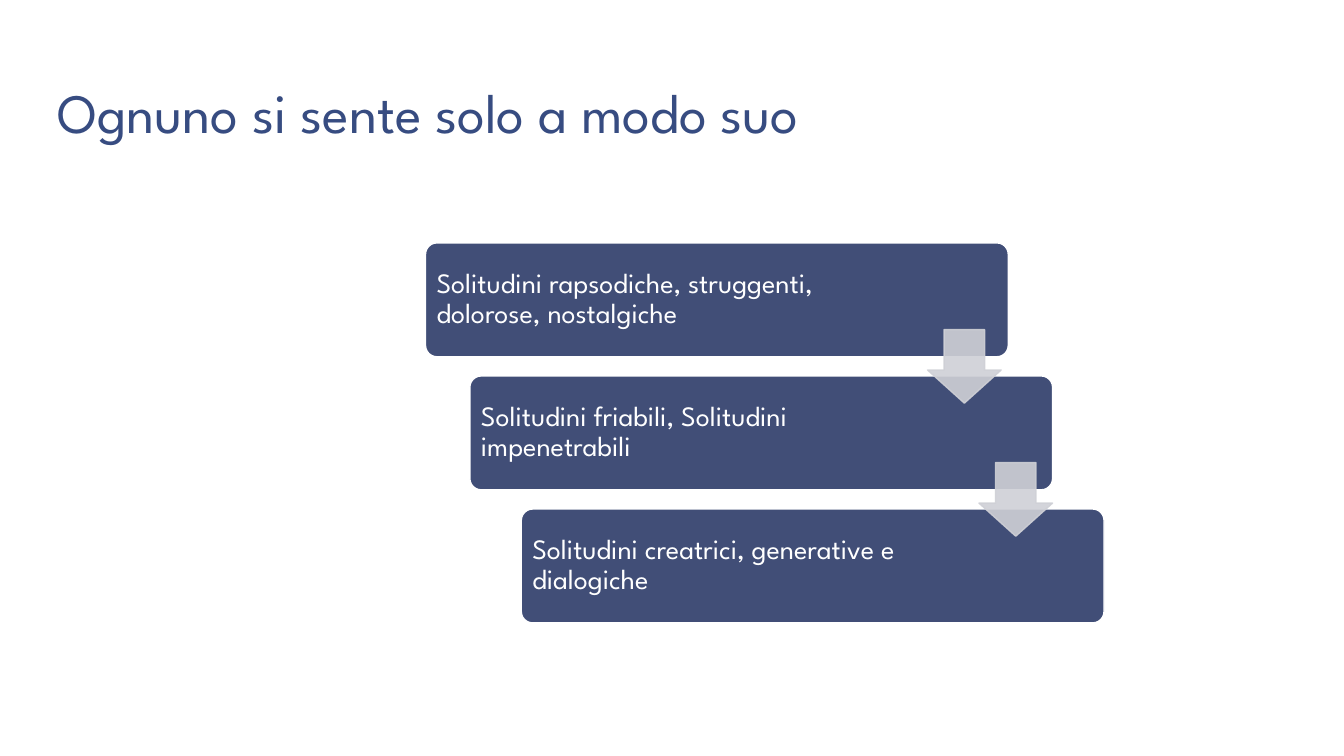
from lxml import etree
from pptx import Presentation
from pptx import util as u
from pptx.dml.color import RGBColor
from pptx.enum import shapes, text
from pptx.oxml.ns import qn

PX = 9144
NAVY, TITLE, ARROW, WHITE = "414E77", "374C81", "CFD0D6", "FFFFFF"
STEPS = [
    (422, 457, "Solitudini rapsodiche, struggenti, dolorose, nostalgiche"),
    (466, 447, "Solitudini friabili, Solitudini impenetrabili"),
    (517, 447, "Solitudini creatrici, generative e dialogiche"),
]
STEP_TOP, STEP_PITCH, STEP_W, STEP_H = 241, 132, 578, 113


def rgb(value):
    return RGBColor.from_string(value)


class Deck:
    font = "League Spartan"

    def __init__(self, width, height):
        self.prs = Presentation()
        self.prs.slide_width = width * PX
        self.prs.slide_height = height * PX
        self.s = self.prs.slides.add_slide(self.prs.slide_layouts[6])

    def shape(self, kind, box, adjustments, fill, line, opacity=100):
        sp = self.s.shapes.add_shape(kind, *(n * PX for n in box))
        sp.shadow.inherit = False
        for i, value in enumerate(adjustments):
            sp.adjustments[i] = value
        sp.fill.solid()
        sp.fill.fore_color.rgb = rgb(fill)
        sp.line.color.rgb = rgb(line)
        sp.line.width = u.Pt(1)
        if opacity < 100:
            for color in sp._element.spPr.iter(qn("a:srgbClr")):
                etree.SubElement(color, qn("a:alpha"), val=str(opacity * 1000))

    def text(self, box, words, size, color, anchor, insets, spacing):
        tf = self.s.shapes.add_textbox(*(n * PX for n in box)).text_frame
        tf.word_wrap = True
        tf.vertical_anchor = anchor
        tf.margin_left = tf.margin_right = insets[0] * PX
        tf.margin_top = tf.margin_bottom = insets[1] * PX
        p = tf.paragraphs[0]
        p.line_spacing = spacing
        r = p.add_run()
        r.text = words
        r.font.name = self.font
        r.font.size = u.Pt(size)
        r.font.color.rgb = rgb(color)


def main():
    deck = Deck(1333, 750)
    deck.text((44, 21, 781, 130), "Ognuno si sente solo a modo suo", 39.6,
              TITLE, text.MSO_ANCHOR.BOTTOM, (13, 7), 0.85)
    tops = [STEP_TOP + i * STEP_PITCH for i in range(len(STEPS))]
    for top, (left, text_w, words) in zip(tops, STEPS):
        deck.shape(shapes.MSO_SHAPE.ROUNDED_RECTANGLE,
                   (left, top, STEP_W, STEP_H), [0.1], NAVY, WHITE)
        deck.text((left + 3, top + 3, text_w, 106), words, 20,
                  WHITE, text.MSO_ANCHOR.MIDDLE, (8, 8), 0.9)
    for top, (left, _, _) in list(zip(tops, STEPS))[1:]:
        deck.shape(shapes.MSO_SHAPE.DOWN_ARROW,
                   (left + 454, top - 46, 73, 73), [0.55, 0.45],
                   ARROW, ARROW, opacity=90)
    deck.prs.save("out.pptx")


if __name__ == "__main__":
    main()
